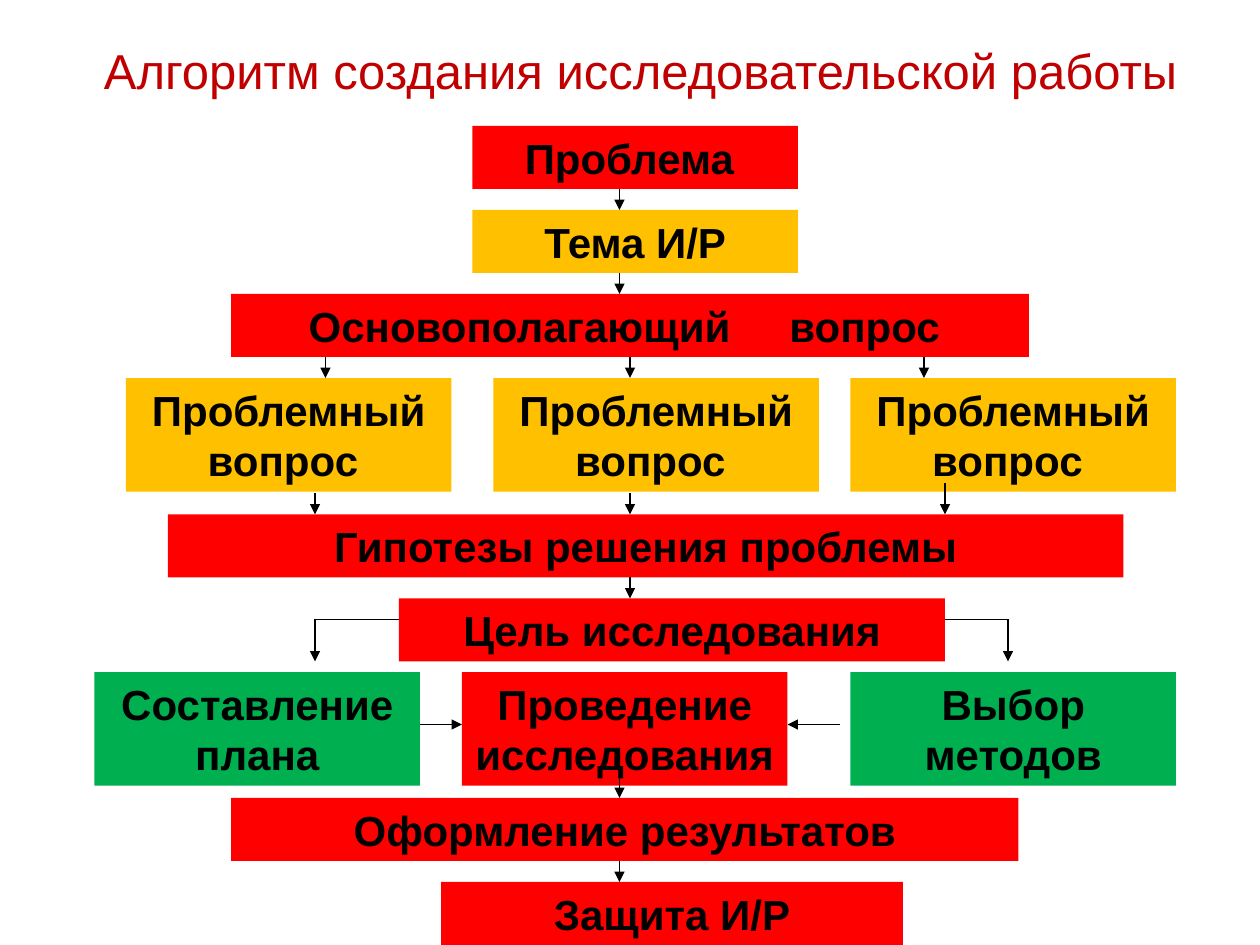
import pptx
import pptx.util
import pptx.dml.color
import pptx.enum.shapes
import pptx.enum.text
import pptx.oxml.ns
from lxml import etree

Pt = pptx.util.Pt
qn = pptx.oxml.ns.qn
ALIGN = pptx.enum.text.PP_ALIGN
ANCHOR = pptx.enum.text.MSO_ANCHOR
COLORS = {
    "title": "C00000",
    "red": "FF0000",
    "gold": "FFC000",
    "green": "00B050",
    "ink": "000000",
}
WIDE, LOW, TALL = 186, 36, 65


def color(name):
    return pptx.dml.color.RGBColor.from_string(COLORS[name])


def style(para, size, name, bold):
    para.alignment = ALIGN.CENTER
    for run in para.runs:
        run.font.name = "Arial"
        run.font.size = Pt(size)
        run.font.bold = bold
        run.font.color.rgb = color(name)


def block(slide, text, fill, left, top, width, height):
    shape = slide.shapes.add_shape(
        pptx.enum.shapes.MSO_SHAPE.RECTANGLE,
        Pt(left), Pt(top), Pt(width), Pt(height))
    shape.shadow.inherit = False
    shape.fill.solid()
    shape.fill.fore_color.rgb = color(fill)
    shape.line.fill.background()
    frame = shape.text_frame
    frame.word_wrap = True
    frame.auto_size = pptx.enum.text.MSO_AUTO_SIZE.SHAPE_TO_FIT_TEXT
    frame.vertical_anchor = ANCHOR.TOP
    frame.text = text
    style(frame.paragraphs[0], 24, "ink", True)
    return frame.paragraphs[0]


def widen(para, word, space):
    gap, last = para.add_run(), para.add_run()
    gap.text, last.text = " ", word
    style(para, 24, "ink", True)
    gap.font._element.set("spc", str(space * 100))


def link(slide, start, end, arrow=True):
    line = slide.shapes.add_connector(
        pptx.enum.shapes.MSO_CONNECTOR.STRAIGHT,
        *(Pt(value) for value in (*start, *end)))
    line.line.color.rgb = color("ink")
    line.line.width = Pt(0.75)
    if arrow:
        etree.SubElement(line.line._get_or_add_ln(), qn("a:tailEnd"), type="triangle")
    etree.SubElement(line._element.spPr, qn("a:effectLst"))


def heading(slide, left, top, width, height):
    title = slide.shapes.title
    title.left, title.top = Pt(left), Pt(top)
    title.width, title.height = Pt(width), Pt(height)
    frame = title.text_frame
    frame.vertical_anchor = ANCHOR.MIDDLE
    frame.text = "Алгоритм создания исследовательской работы"
    style(frame.paragraphs[0], 28, "title", False)


def flow(slide, left, top):
    bars = [
        ("Проблема ", "red", 216, 0, WIDE, LOW),
        ("Тема И/Р", "gold", 216, 48, WIDE, LOW),
        ("Гипотезы решения проблемы", "red", 42, 222, 546, LOW),
        ("Цель исследования", "red", 174, 270, 312, LOW),
        ("Проведение исследования ", "red", 210, 312, WIDE, TALL),
        ("Составление плана", "green", 0, 312, WIDE, TALL),
        ("Выбор методов", "green", 432, 312, WIDE, TALL),
        ("Оформление результатов", "red", 78, 384, 450, LOW),
        ("Защита И/Р", "red", 198, 432, 264, LOW),
    ]
    bars += [("Проблемный вопрос ", "gold", x, 144, WIDE, TALL)
             for x in (18, 228, 432)]
    for text, fill, x, y, width, height in bars:
        block(slide, text, fill, left + x, top + y, width, height)
    para = block(slide, "Основополагающий", "red", left + 78, top + 96, 456, LOW)
    widen(para, "вопрос ", 27)

    drops = [(300, 36), (300, 84), (132, 132), (306, 132), (474, 132),
             (126, 210), (306, 210), (306, 258), (300, 372), (300, 420)]
    links = [(x, y, x, y + 12) for x, y in drops]
    links += [(486, 204, 486, 222), (186, 342, 210, 342), (426, 342, 396, 342)]
    for x, y, right, low in links:
        link(slide, (left + x, top + y), (left + right, top + low))
    for side, turn in ((174, 126), (486, 522)):
        bend = (left + turn, top + 282)
        link(slide, (left + side, top + 282), bend, arrow=False)
        link(slide, bend, (left + turn, top + 306))


def main():
    deck = pptx.Presentation()
    deck.slide_width, deck.slide_height = Pt(720), Pt(540)
    slide = deck.slides.add_slide(deck.slide_layouts[5])
    heading(slide, 36, 19.5, 660, 40.5)
    flow(slide, 54, 72)
    deck.save("out.pptx")


if __name__ == "__main__":
    main()
